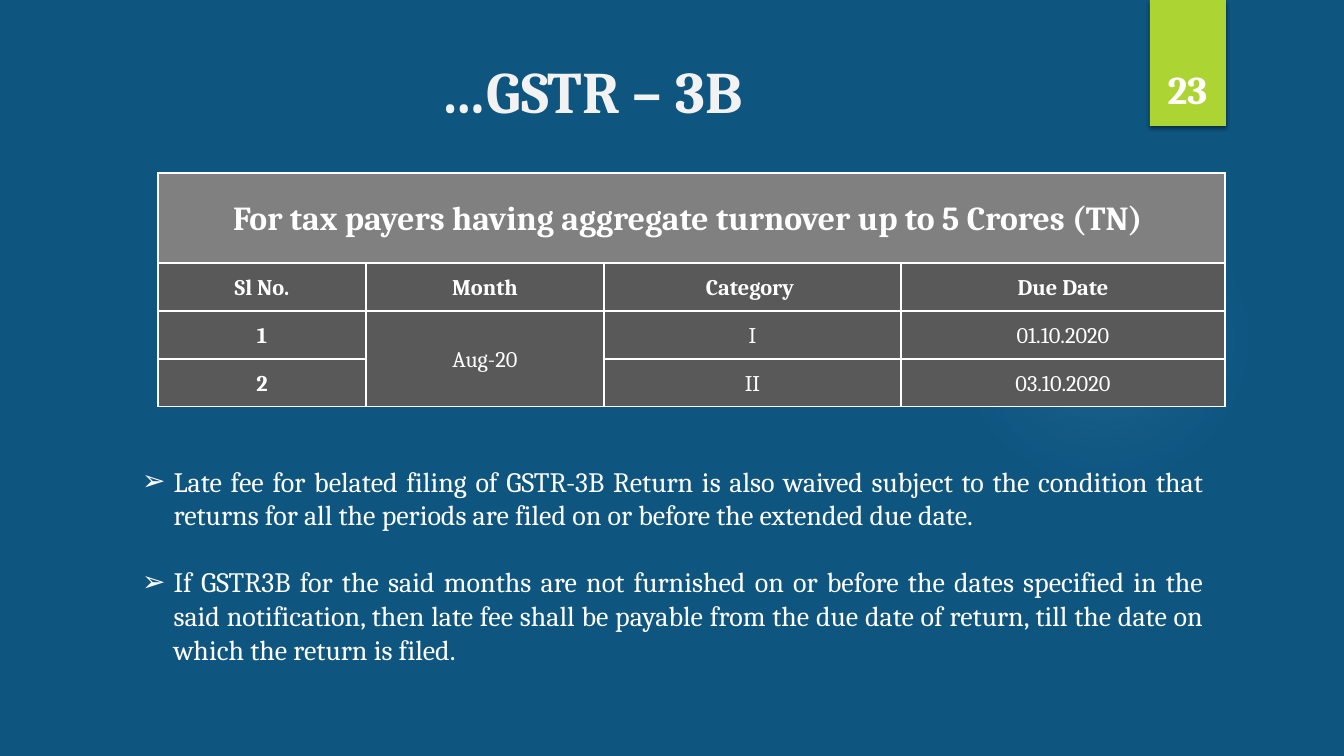
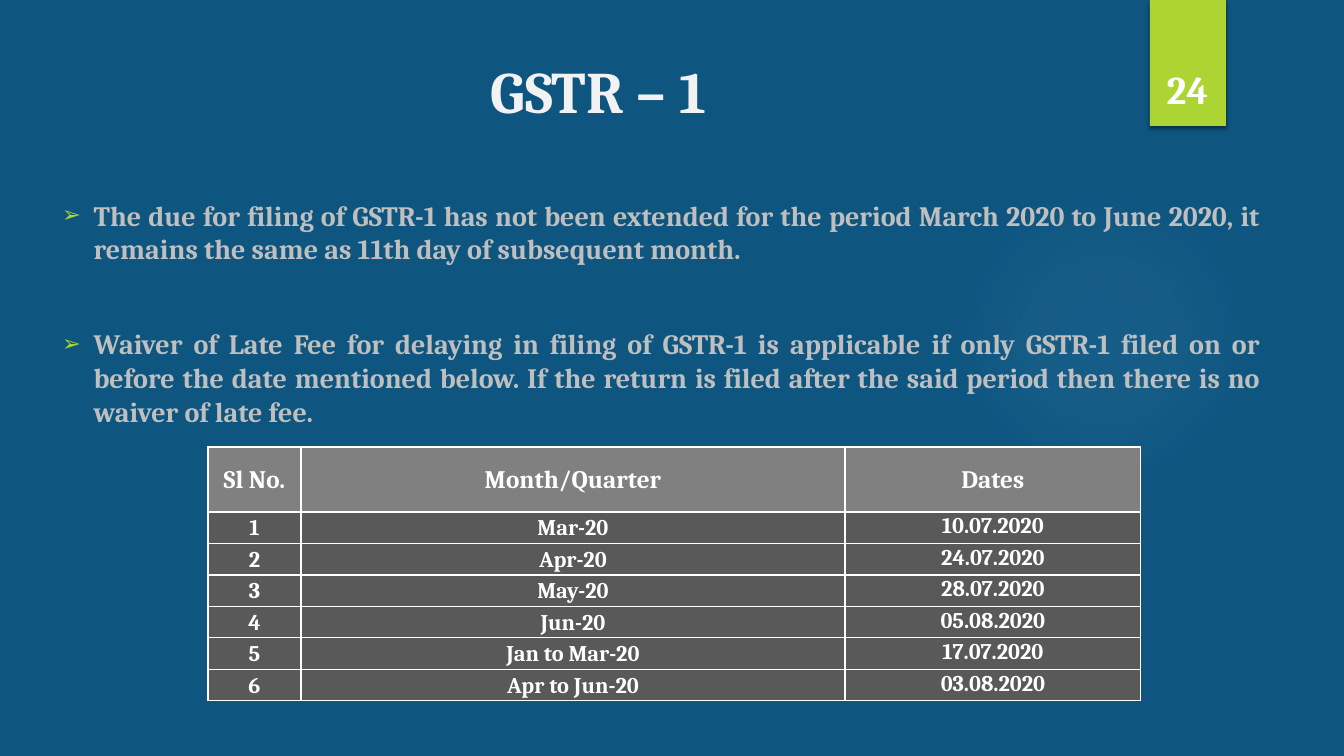
import pptx
import pptx.util
import pptx.oxml
import pptx.oxml.ns
import pptx.dml.color
import pptx.enum.shapes
import pptx.enum.text

PX = 914400 / 100.8
FONT = "Cambria"
BACKDROP, LIME, SKY = "0E5580", "ACD433", "7AC4F0"
WHITE, TITLE_TEXT, MUTED_TEXT = "FFFFFF", "F2F2F2", "BFBFBF"
HEADER_GRAY, ROW_GRAY = "808080", "595959"

TITLE_BOX = (47, 50, 1103, 154)
NUMBER_BOX = (1141, 32, 93, 85)
BAND_BOX = (1150, 0, 76, 126)
GLOW_BOX = (949, 184, 310, 310)
GLOW_STOPS = [(0, 7), (36, 6), (69, 0)]

SLIDES = [
    {
        "number": "23",
        "title": "…GSTR – 3B ",
        "points": [
            "Late fee for belated filing of GSTR-3B Return is also waived subject to the condition "
            "that returns for all the periods are filed on or before the extended due date.",
            "If GSTR3B for the said months are not furnished on or before the dates specified in the "
            "said notification, then late fee shall be payable from the due date of return, till the "
            "date on which the return is filed.",
        ],
        "points_style": {"box": (132, 459, 1082, 214), "color": WHITE, "bold": False, "gap": 24,
                         "bullet_color": WHITE, "bullet_percent": 100},
        "due_dates": {
            "origin": (158, 173), "columns": [208, 238, 297, 324], "height": 234,
            "header_height": 90, "header_size": 24, "bold_rows": 2, "top_column": None,
            "merges": [((0, 0), (0, 3)), ((2, 1), (3, 1))],
            "rows": [
                ["For tax payers having aggregate turnover up to 5 Crores (TN) ", "", "", ""],
                ["Sl No.", "Month", "Category ", "Due Date"],
                ["1", "Aug-20", "I", "01.10.2020"],
                ["2", "", "II", "03.10.2020"],
            ],
        },
    },
    {
        "number": "24",
        "title": "GSTR – 1",
        "points": [
            "The due for filing of GSTR-1 has not been extended for the period March 2020 to June "
            "2020, it remains the same as 11th day of subsequent month.",
            "Waiver of Late Fee for delaying in filing of GSTR-1 is applicable if only GSTR-1 filed "
            "on or before the date mentioned below. If the return is filed after the said period "
            "then there is no waiver of late fee.",
        ],
        "points_style": {"box": (52, 193, 1219, 236), "color": MUTED_TEXT, "bold": True, "gap": 44,
                         "bullet_color": LIME, "bullet_percent": 80},
        "due_dates": {
            "origin": (208, 447), "columns": [93, 544, 296], "height": 254,
            "header_height": 65, "header_size": 18, "bold_rows": 7, "top_column": 2,
            "merges": [],
            "rows": [
                ["Sl No.", "Month/Quarter", "Dates"],
                ["1", "Mar-20", "10.07.2020"],
                ["2", "Apr-20", "24.07.2020"],
                ["3", "May-20", "28.07.2020"],
                ["4", "Jun-20", "05.08.2020"],
                ["5", "Jan to Mar-20", "17.07.2020"],
                ["6", "Apr to Jun-20", "03.08.2020"],
            ],
        },
    },
]

ALIGN = pptx.enum.text.PP_ALIGN
ANCHOR = pptx.enum.text.MSO_ANCHOR
SHAPE = pptx.enum.shapes.MSO_SHAPE


def px(length):
    return pptx.util.Emu(round(length * PX))


def rgb(color):
    return pptx.dml.color.RGBColor.from_string(color)


def xml(markup):
    head, rest = markup.split(">", 1)
    slash = "/" if head.endswith("/") else ""
    return pptx.oxml.parse_xml(
        f'{head.rstrip("/")} {pptx.oxml.ns.nsdecls("a")}{slash}>{rest}')


def place(part, box):
    part.left, part.top, part.width, part.height = map(px, box)


def write(paragraph, text, size, color, bold, align=ALIGN.CENTER):
    paragraph.alignment = align
    run = paragraph.add_run()
    run.text = text
    run.font.name = FONT
    run.font.size = pptx.util.Pt(size)
    run.font.bold = bold
    run.font.color.rgb = rgb(color)


def prepare(frame, anchor):
    frame.word_wrap = True
    frame.auto_size = pptx.enum.text.MSO_AUTO_SIZE.NONE
    frame.vertical_anchor = anchor


def decorate_master(master, slide):
    master.background.fill.solid()
    master.background.fill.fore_color.rgb = rgb(BACKDROP)

    glow = slide.shapes.add_shape(SHAPE.OVAL, *map(px, GLOW_BOX))
    stops = "".join(
        f'<a:gs pos="{pos * 1000}"><a:srgbClr val="{SKY}"><a:alpha val="{alpha * 1000}"/>'
        "</a:srgbClr></a:gs>" for pos, alpha in GLOW_STOPS)
    glow.element.spPr.insert(2, xml(
        f'<a:gradFill><a:gsLst>{stops}</a:gsLst><a:path path="circle">'
        '<a:fillToRect l="50000" t="50000" r="50000" b="50000"/></a:path></a:gradFill>'))

    band = slide.shapes.add_shape(SHAPE.RECTANGLE, *map(px, BAND_BOX))
    band.fill.solid()
    band.fill.fore_color.rgb = rgb(LIME)

    for index, part in enumerate([glow, band]):
        part.line.fill.background()
        part.shadow.inherit = False
        part.element.xpath("./p:nvSpPr/p:cNvPr")[0].set("id", str(20 + index))
        master.shapes.element.insert(2 + index, part.element)

    band.element.xpath("./p:spPr/a:effectLst")[0].append(xml(
        '<a:outerShdw blurRad="38100" dist="25400" dir="5400000" rotWithShape="0">'
        '<a:srgbClr val="000000"><a:alpha val="45000"/></a:srgbClr></a:outerShdw>'))


def add_title(slide, text):
    title = slide.shapes.title
    place(title, TITLE_BOX)
    prepare(title.text_frame, ANCHOR.TOP)
    write(title.text_frame.paragraphs[0], text, 42, TITLE_TEXT, True)


def add_number(slide, text):
    number = slide.shapes.add_textbox(*map(px, NUMBER_BOX))
    prepare(number.text_frame, ANCHOR.BOTTOM)
    write(number.text_frame.paragraphs[0], text, 28, WHITE, True)


def add_points(slide, points, style):
    body = slide.placeholders[1]
    place(body, style["box"])
    frame = body.text_frame
    prepare(frame, ANCHOR.TOP)
    for index, point in enumerate(points):
        paragraph = frame.add_paragraph() if index else frame.paragraphs[0]
        properties = paragraph._p.get_or_add_pPr()
        properties.set("marL", "285750")
        properties.set("indent", "-285750")
        for markup in (
            f'<a:buClr><a:srgbClr val="{style["bullet_color"]}"/></a:buClr>',
            f'<a:buSzPct val="{style["bullet_percent"] * 1000}"/>',
            '<a:buFont typeface="Arial"/>',
            '<a:buChar char="➢"/>',
        ):
            properties.append(xml(markup))
        paragraph.space_before = pptx.util.Pt(style["gap"] if index else 0)
        write(paragraph, point, 20, style["color"], style["bold"], ALIGN.JUSTIFY)


def style_cell(cell, fill, anchor):
    cell.margin_left = cell.margin_right = px(7)
    cell.margin_top = cell.margin_bottom = 0
    cell.vertical_anchor = anchor
    properties = cell._tc.get_or_add_tcPr()
    for side in "LRTB":
        properties.append(xml(
            f'<a:ln{side} w="12700"><a:solidFill><a:srgbClr val="{WHITE}"/></a:solidFill>'
            f"</a:ln{side}>"))
    cell.fill.solid()
    cell.fill.fore_color.rgb = rgb(fill)


def add_due_dates(slide, data):
    rows, columns = data["rows"], data["columns"]
    box = (*data["origin"], sum(columns), data["height"])
    table = slide.shapes.add_table(len(rows), len(columns), *map(px, box)).table
    table.first_row = table.horz_banding = False
    for column, width in zip(table.columns, columns):
        column.width = px(width)
    row_height = (data["height"] - data["header_height"]) / (len(rows) - 1)
    for r, texts in enumerate(rows):
        table.rows[r].height = px(row_height if r else data["header_height"])
        for c, text in enumerate(texts):
            cell = table.cell(r, c)
            at_top = r > 0 and c == data["top_column"]
            style_cell(cell, ROW_GRAY if r else HEADER_GRAY,
                       ANCHOR.TOP if at_top else ANCHOR.MIDDLE)
            if text:
                paragraph = cell.text_frame.paragraphs[0]
                paragraph.line_spacing = 1.07
                write(paragraph, text, 16 if r else data["header_size"], WHITE,
                      r < data["bold_rows"] or c == 0)
    for first, last in data["merges"]:
        table.cell(*first).merge(table.cell(*last))


def main():
    deck = pptx.Presentation()
    deck.slide_width, deck.slide_height = px(1344), px(756)
    for index, content in enumerate(SLIDES):
        slide = deck.slides.add_slide(deck.slide_layouts[1])
        if index == 0:
            decorate_master(deck.slide_master, slide)
        add_title(slide, content["title"])
        add_points(slide, content["points"], content["points_style"])
        add_number(slide, content["number"])
        add_due_dates(slide, content["due_dates"])
    deck.save("out.pptx")


if __name__ == "__main__":
    main()
